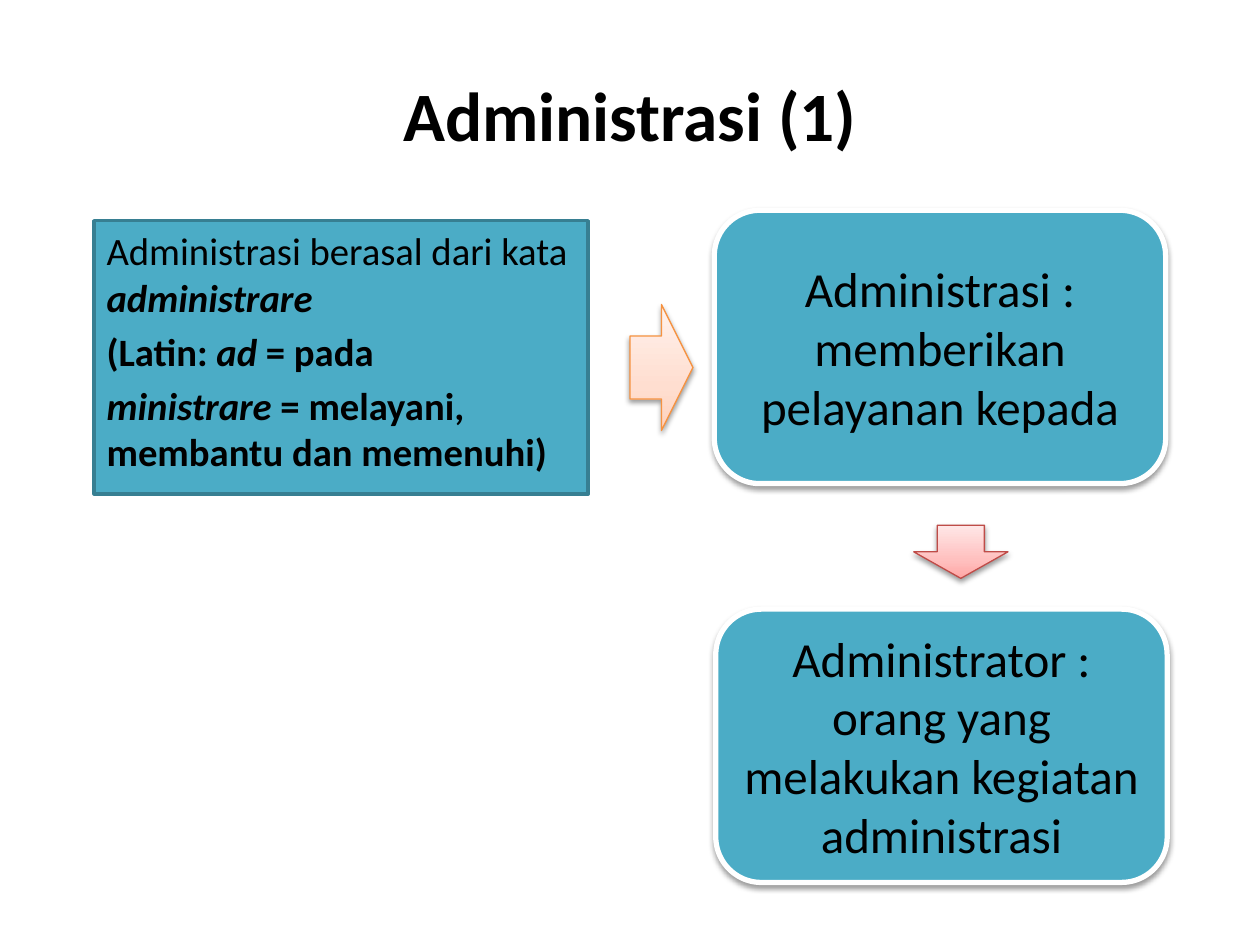
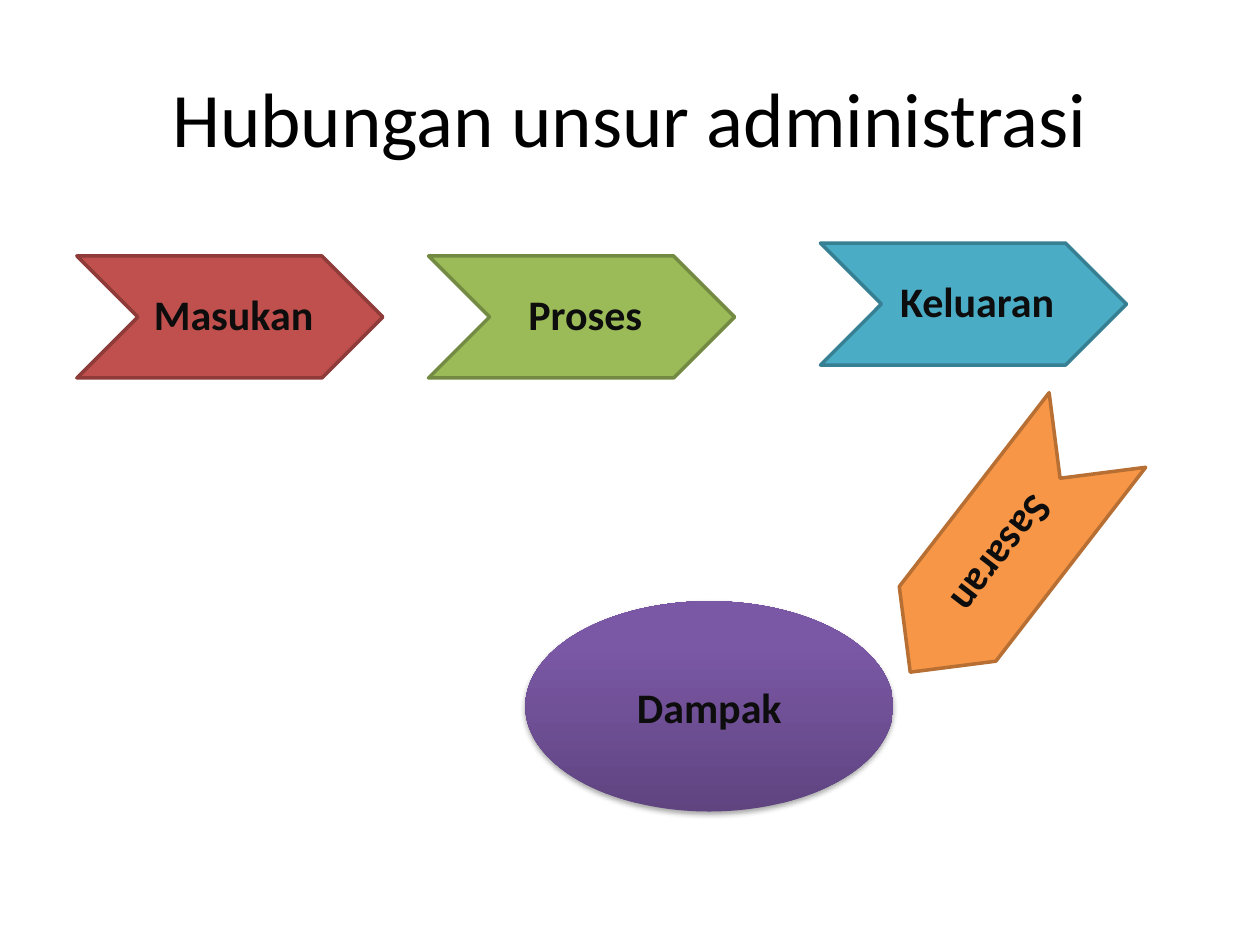
from lxml import etree
from pptx import Presentation
from pptx.dml.color import RGBColor
from pptx.enum.shapes import MSO_SHAPE as SHAPE
from pptx.enum.text import MSO_ANCHOR as ANCHOR, PP_ALIGN as ALIGN
from pptx.oxml import parse_xml
from pptx.oxml.ns import nsdecls, qn
from pptx.util import Cm, Pt

# Shared look
FONT = "Calibri"
BLACK = RGBColor(0x00, 0x00, 0x00)
INK = RGBColor(0x0D, 0x0D, 0x0D)
WHITE = RGBColor(0xFF, 0xFF, 0xFF)
TEAL = RGBColor(0x4B, 0xAC, 0xC6)
TEAL_EDGE = RGBColor(0x37, 0x7F, 0x92)
RED = RGBColor(0xC0, 0x50, 0x4D)
RED_EDGE = RGBColor(0x8E, 0x3B, 0x39)
GREEN = RGBColor(0x9B, 0xBB, 0x59)
GREEN_EDGE = RGBColor(0x73, 0x8A, 0x42)
ORANGE = RGBColor(0xF7, 0x96, 0x46)
ORANGE_EDGE = RGBColor(0xB7, 0x6F, 0x34)
PEACH_EDGE = RGBColor(0xF6, 0x92, 0x40)
PINK_EDGE = RGBColor(0xBF, 0x4C, 0x48)

# Gradients run from bottom to top: (percent, colour)
PEACH = [(0, RGBColor(0xFF, 0xD2, 0xBD)), (35, RGBColor(0xFF, 0xDE, 0xD0)),
         (100, RGBColor(0xFF, 0xF2, 0xED))]
PINK = [(0, RGBColor(0xFF, 0xA6, 0xA5)), (35, RGBColor(0xFF, 0xC0, 0xBF)),
        (100, RGBColor(0xFF, 0xE7, 0xE7))]
PURPLE = [(0, RGBColor(0x5F, 0x44, 0x80)), (80, RGBColor(0x7B, 0x58, 0xA6)),
          (100, RGBColor(0x7C, 0x57, 0xA8))]


def set_gradient(sp, stops):
    sp.fill.gradient()
    grad = sp._element.spPr.find(qn("a:gradFill"))
    gs = "".join(f'<a:gs pos="{pos * 1000}"><a:srgbClr val="{color}"/></a:gs>'
                 for pos, color in stops)
    new = parse_xml(f'<a:gradFill {nsdecls("a")} rotWithShape="1"><a:gsLst>{gs}</a:gsLst>'
                    '<a:lin ang="16200000" scaled="0"/></a:gradFill>')
    grad.getparent().replace(grad, new)


def add_shadow(sp, opacity):
    effects = sp._element.spPr.find(qn("a:effectLst"))
    outer = etree.SubElement(effects, qn("a:outerShdw"), blurRad=str(Pt(3.1)),
                             dist=str(Pt(1.7)), dir="5400000", rotWithShape="0")
    color = etree.SubElement(outer, qn("a:srgbClr"), val=str(BLACK))
    etree.SubElement(color, qn("a:alpha"), val=str(opacity * 1000))


def add_figure(s, kind, box, fill, edge=None, width=2, shadow=0):
    """Preset shape; fill is a colour or a list of gradient stops."""
    sp = s.shapes.add_shape(kind, *map(Cm, box))
    sp.shadow.inherit = False
    if isinstance(fill, list):
        set_gradient(sp, fill)
    else:
        sp.fill.solid()
        sp.fill.fore_color.rgb = fill
    if edge is None:
        sp.line.fill.background()
    else:
        sp.line.color.rgb = edge
        sp.line.width = Pt(width)
    if shadow:
        add_shadow(sp, shadow)
    return sp


def style_run(r, size, color=BLACK, bold=False, italic=False):
    f = r.font
    f.name, f.size, f.bold, f.italic = FONT, Pt(size), bold, italic
    f.color.rgb = color


def write_centred(sp, text, size, color=BLACK, bold=False):
    tf = sp.text_frame
    tf.word_wrap = True
    tf.vertical_anchor = ANCHOR.MIDDLE
    tf.text = text
    p = tf.paragraphs[0]
    p.alignment = ALIGN.CENTER
    style_run(p.runs[0], size, color, bold)
    return tf


def add_title(s, text, top, height, size, bold=False):
    tb = s.shapes.add_textbox(Cm(1.27), Cm(top), Cm(22.86), Cm(height))
    write_centred(tb, text, size, bold=bold)


def add_origin_box(s, box, paragraphs):
    """Left-aligned box; each paragraph is a list of (text, bold, italic)."""
    tf = add_figure(s, SHAPE.RECTANGLE, box, TEAL, TEAL_EDGE).text_frame
    tf.word_wrap = True
    tf.vertical_anchor = ANCHOR.TOP
    for i, parts in enumerate(paragraphs):
        p = tf.add_paragraph() if i else tf.paragraphs[0]
        p.alignment = ALIGN.LEFT
        p.space_before = Pt(4.4)
        for text, bold, italic in parts:
            r = p.add_run()
            r.text = text
            style_run(r, 22.1, bold=bold, italic=italic)


def add_card(s, left, top, text):
    sp = add_figure(s, SHAPE.ROUNDED_RECTANGLE, (left, top, 9.1, 5.51),
                    TEAL, WHITE, 3, shadow=38)
    write_centred(sp, text, 28)


def add_step(s, text, left, top, fill, edge, rotation=0):
    sp = add_figure(s, SHAPE.CHEVRON, (left, top, 6.17, 2.46), fill, edge)
    sp.rotation = rotation
    tf = write_centred(sp, text, 24, INK, True)
    tf.margin_left = Cm(0.25)
    tf.margin_right = tf.margin_top = tf.margin_bottom = Cm(0.1)
    tf.paragraphs[0].line_spacing = 0.9


def build_definition(s):
    add_title(s, "Administrasi (1)", 1.4, 1.78, 39.6, bold=True)
    add_origin_box(s, (1.9, 4.45, 9.96, 5.51), [
        [("Administrasi berasal dari kata ", False, False), ("administrare", True, True)],
        [("(Latin: ", True, False), ("ad", True, True), (" = pada", True, False)],
        [("ministrare", True, True),
         (" = melayani, membantu dan memenuhi)", True, False)],
    ])
    add_figure(s, SHAPE.RIGHT_ARROW, (12.7, 6.14, 1.27, 2.54),
               PEACH, PEACH_EDGE, 0.75, shadow=38)
    add_card(s, 14.4, 4.24, "Administrasi : memberikan pelayanan kepada")
    add_figure(s, SHAPE.DOWN_ARROW, (18.42, 10.59, 1.9, 1.07),
               PINK, PINK_EDGE, 0.75, shadow=38)
    add_card(s, 14.43, 12.28,
             "Administrator : orang yang melakukan kegiatan administrasi")


def build_relations(s):
    add_title(s, "Hubungan unsur administrasi", 0.76, 3.18, 44)
    add_step(s, "Masukan", 1.55, 5.16, RED, RED_EDGE)
    add_step(s, "Proses", 8.64, 5.16, GREEN, GREEN_EDGE)
    add_step(s, "Keluaran", 16.54, 4.9, TEAL, TEAL_EDGE)
    add_step(s, "Sasaran", 17.15, 9.88, ORANGE, ORANGE_EDGE, rotation=127.7)
    impact = add_figure(s, SHAPE.OVAL, (10.59, 12.12, 7.42, 4.24), PURPLE, shadow=35)
    write_centred(impact, "Dampak", 24, INK, True)


def main():
    prs = Presentation()
    prs.slide_width, prs.slide_height = Cm(25.4), Cm(19.05)
    for build in (build_definition, build_relations):
        build(prs.slides.add_slide(prs.slide_layouts[6]))
    prs.save("out.pptx")


if __name__ == "__main__":
    main()
